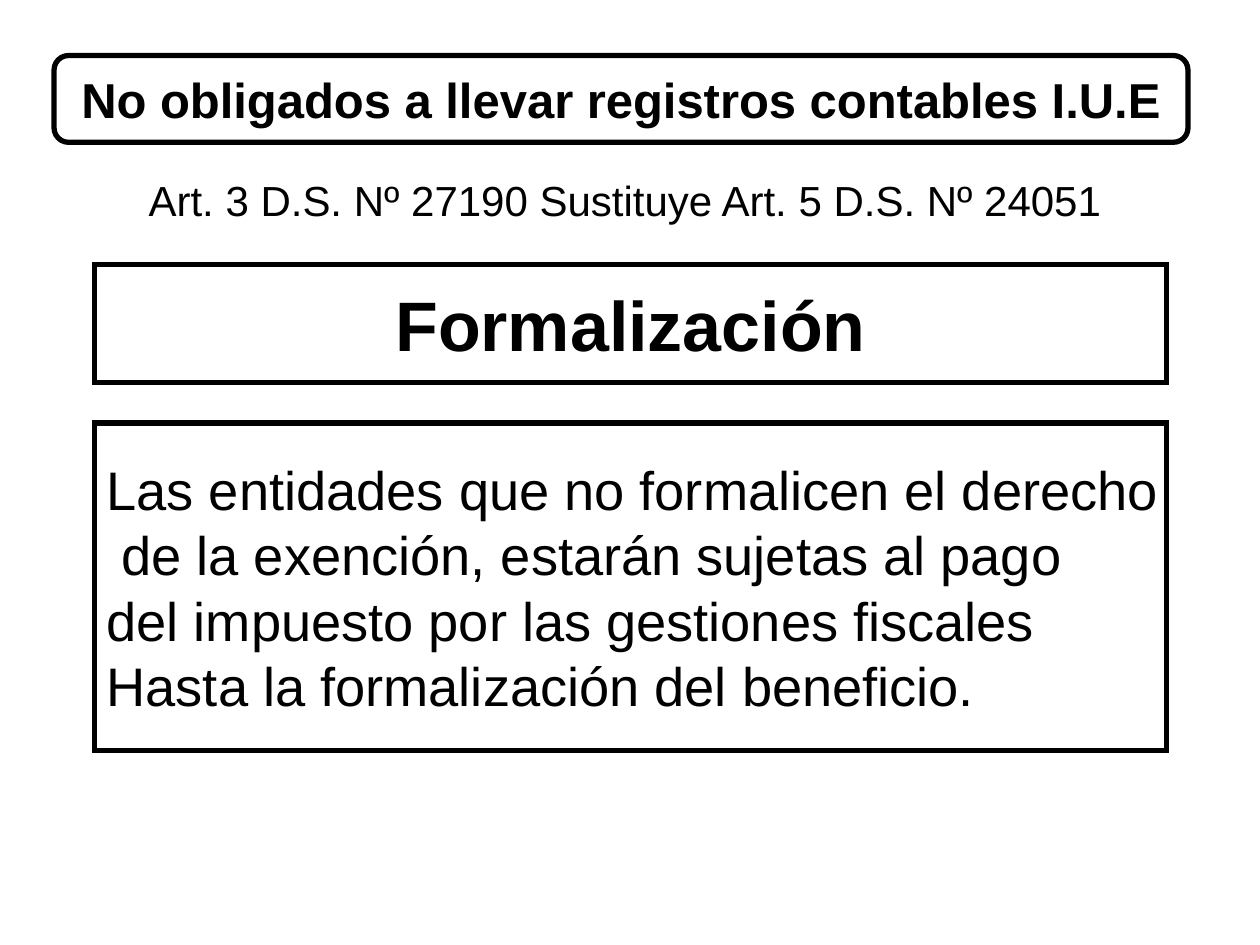
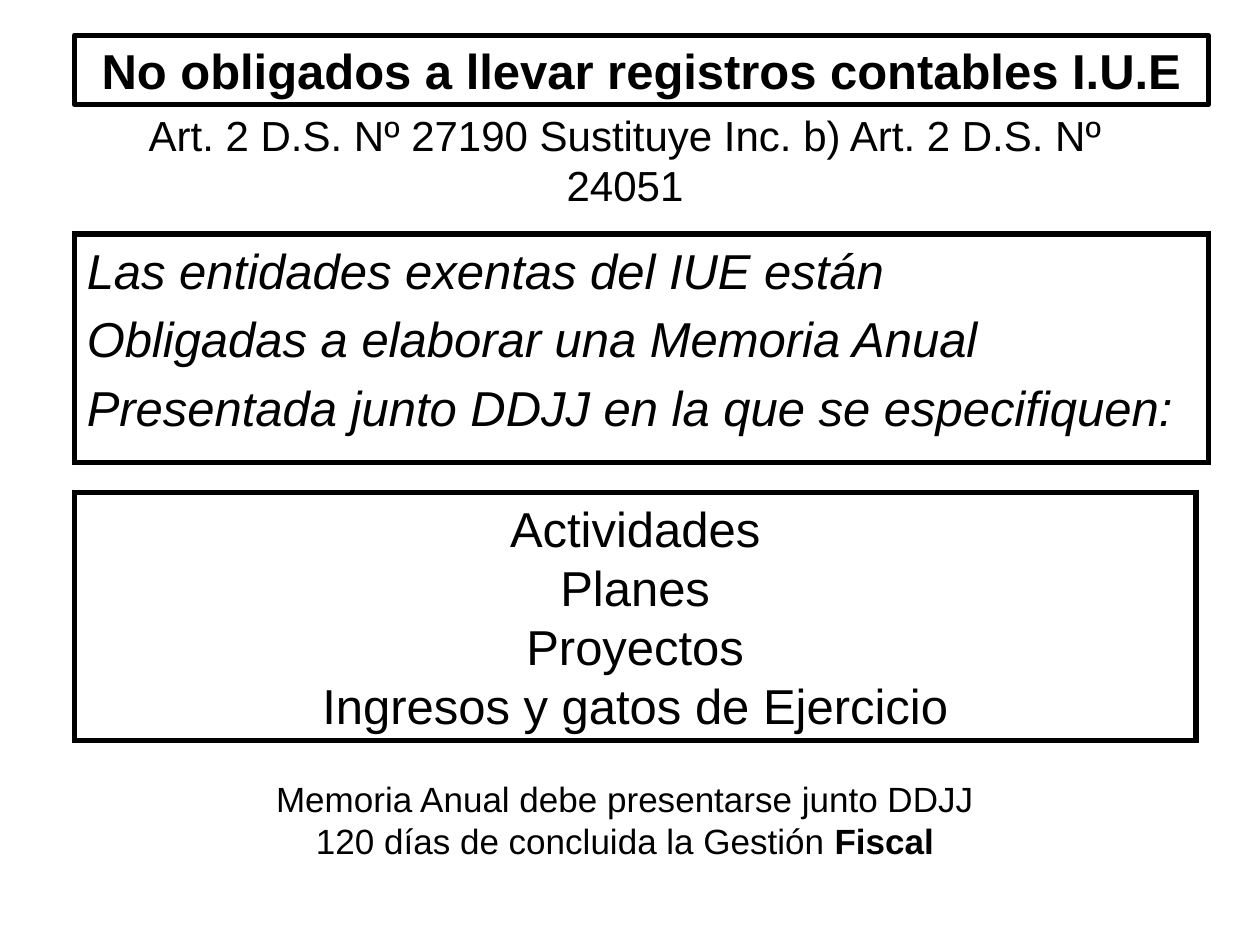
from pptx import Presentation
from pptx import util as u
from pptx.dml.color import RGBColor
from pptx.enum import shapes, text
from pptx.oxml.ns import qn
from lxml import etree

COLORS = {"ink": "000000", "paper": "FFFFFF"}
FONT = "Arial"
TITLE = "No obligados a llevar registros contables I.U.E"
BOLD = {"bold": True}
SECOND_LINE_INDENT = 0.3

SLIDES = [
    {
        "title": {"at": (1.09, 1.12, 22.86, 1.75), "corner": 0.167},
        "decree": {"top": 3.53, "lines": ["Art. 3 D.S. Nº 27190 Sustituye Art. 5 D.S. Nº 24051"]},
        "boxes": [
            {"at": (1.9, 5.33, 21.62, 2.39), "size": 40, "bold": True,
             "lines": ["Formalización"]},
            {"at": (1.9, 8.53, 21.62, 6.6), "size": 31, "align": "LEFT",
             "indents": {1: SECOND_LINE_INDENT},
             "lines": ["Las entidades que no formalicen el derecho",
                       "de la exención, estarán sujetas al pago",
                       "del impuesto por las gestiones fiscales",
                       "Hasta la formalización del beneficio."]},
        ],
        "notes": [],
    },
    {
        "title": {"at": (1.5, 0.71, 22.86, 1.4), "corner": 0},
        "decree": {"top": 2.72, "lines": ["Art. 2 D.S. Nº 27190 Sustituye Inc. b) Art. 2 D.S. Nº 24051"]},
        "boxes": [
            {"at": (1.5, 4.72, 22.86, 4.6), "size": 28, "italic": True,
             "align": "LEFT", "anchor": "TOP", "wrap": True, "gap": 5.6,
             "lines": ["Las entidades exentas del IUE están",
                       "Obligadas a elaborar una Memoria Anual",
                       "Presentada junto DDJJ en la que se especifiquen:"]},
            {"at": (1.5, 9.93, 22.61, 5), "size": 28,
             "lines": ["Actividades", "Planes", "Proyectos",
                       "Ingresos y gatos de Ejercicio"]},
        ],
        "notes": [
            {"at": (1.5, 15.52, 22.2, 2.01), "size": 20,
             "lines": ["Memoria Anual debe presentarse junto DDJJ",
                       [("120 días de concluida la Gestión ", {}), ("Fiscal", BOLD)]]},
        ],
    },
]


def write(box, lines, size, bold=False, italic=False, align="CENTER",
          anchor="MIDDLE", wrap=False, gap=0, indents=None):
    frame = box.text_frame
    frame.word_wrap = wrap
    frame.vertical_anchor = getattr(text.MSO_ANCHOR, anchor)
    for index, line in enumerate(lines):
        para = frame.paragraphs[0] if index == 0 else frame.add_paragraph()
        para.alignment = getattr(text.PP_ALIGN, align)
        if index:
            para.space_before = u.Pt(gap)
        if indents and index in indents:
            para._p.get_or_add_pPr().set("marL", str(u.Cm(indents[index])))
        font = para.font
        font.name, font.size = FONT, u.Pt(size)
        font.bold, font.italic = bold, italic
        font.color.rgb = RGBColor.from_string(COLORS["ink"])
        for words, style in [(line, {})] if isinstance(line, str) else line:
            span = para.add_run()
            span.text = words
            if "bold" in style:
                span.font.bold = style["bold"]


def add_frame(page, at, lines, corner=None, **style):
    kind = shapes.MSO_SHAPE.RECTANGLE if corner is None else shapes.MSO_SHAPE.ROUNDED_RECTANGLE
    box = page.shapes.add_shape(kind, *map(u.Cm, at))
    if corner is not None:
        box.adjustments[0] = corner
    box.shadow.inherit = False
    box.fill.background()
    box.line.color.rgb = RGBColor.from_string(COLORS["ink"])
    box.line.width = u.Pt(3)
    join = "a:miter" if corner is None else "a:round"
    etree.SubElement(box._element.spPr.find(qn("a:ln")), qn(join))
    write(box, lines, **style)


def add_label(page, at, lines, **style):
    write(page.shapes.add_textbox(*map(u.Cm, at)), lines, **style)


def build_page(deck, content):
    page = deck.slides.add_slide(deck.slide_layouts[6])
    page.background.fill.solid()
    page.background.fill.fore_color.rgb = RGBColor.from_string(COLORS["paper"])
    add_frame(page, lines=[TITLE], size=28, bold=True, wrap=True, **content["title"])
    decree = content["decree"]
    add_label(page, (1.7, decree["top"], 21.8, 1), decree["lines"], size=24)
    for box in content["boxes"]:
        add_frame(page, **box)
    for note in content["notes"]:
        add_label(page, **note)


def main():
    deck = Presentation()
    deck.slide_width, deck.slide_height = u.Cm(25.4), u.Cm(19.05)
    for content in SLIDES:
        build_page(deck, content)
    deck.save("out.pptx")


if __name__ == "__main__":
    main()
